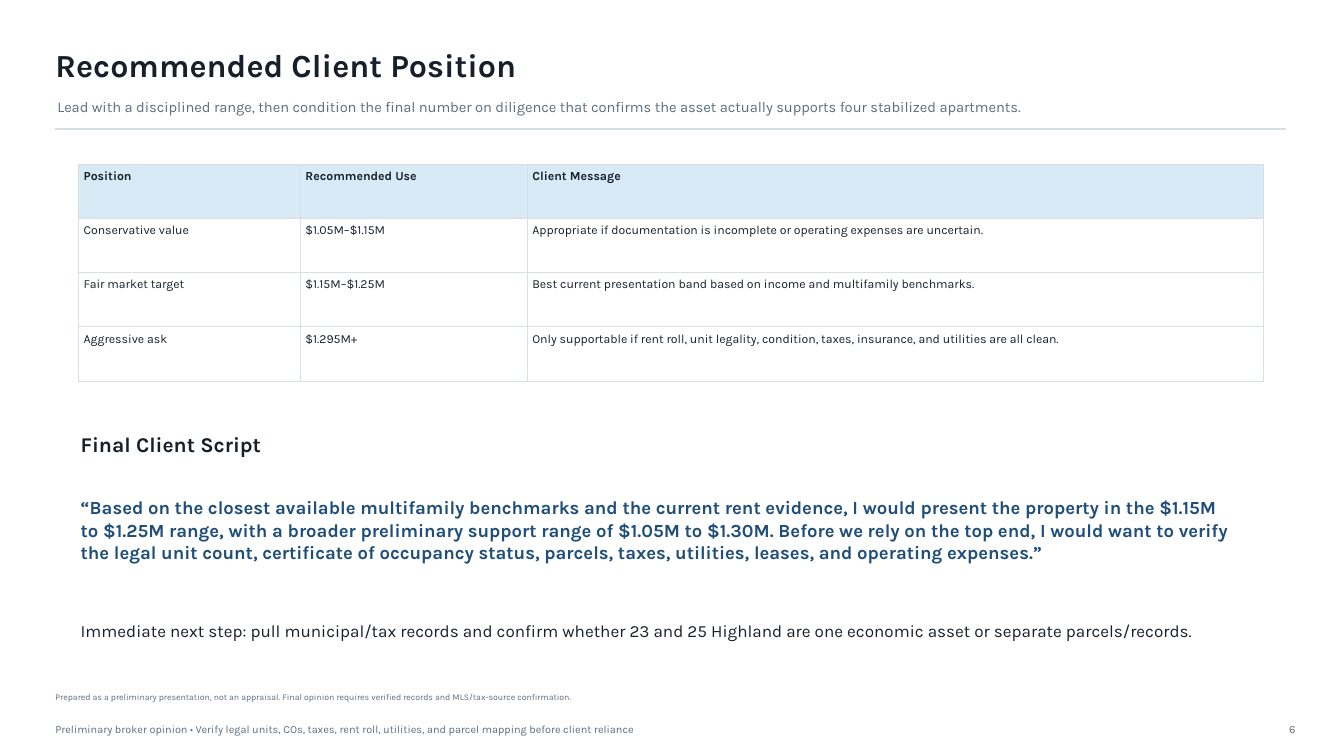
import pptx
import pptx.util
import pptx.dml.color
import pptx.enum.shapes
import pptx.enum.text
import lxml.etree
from dataclasses import dataclass
from pptx.oxml.ns import qn


@dataclass(frozen=True)
class Theme:
    font: str = "Karla"
    ink: str = "17202A"
    muted: str = "5D6D7E"
    accent: str = "1F4E79"
    rule: str = "D8DEE6"
    header: str = "D9EAF7"
    paper: str = "FFFFFF"
    title: float = 23
    subtitle: float = 10.5
    cell: float = 8.8
    heading: float = 15
    quote: float = 13.2
    body: float = 12.2
    note: float = 6.3
    footer: float = 7.8
    page: float = 8


T = Theme()
WIDTH, HEIGHT = 13.33, 7.5
MARGIN, INDENT = 0.55, 0.8
FOOTER_TOP, FOOTER_H = 7.12, 0.22

# text, (left, top, width, height), size, colour, bold
TEXTS = [
    ("Recommended Client Position", (MARGIN, 0.42, 8.9, 0.44), T.title, T.ink, True),
    ("Lead with a disciplined range, then condition the final number on diligence "
     "that confirms the asset actually supports four stabilized apartments.",
     (0.57, 0.92, 9.7, 0.28), T.subtitle, T.muted, False),
    ("Final Client Script", (INDENT, 4.25, 2.4, 0.32), T.heading, T.ink, True),
    ("“Based on the closest available multifamily benchmarks and the current rent "
     "evidence, I would present the property in the $1.15M to $1.25M range, with a "
     "broader preliminary support range of $1.05M to $1.30M. Before we rely on the "
     "top end, I would want to verify the legal unit count, certificate of occupancy "
     "status, parcels, taxes, utilities, leases, and operating expenses.”",
     (INDENT, 4.73, 11.45, 1.05), T.quote, T.accent, True),
    ("Immediate next step: pull municipal/tax records and confirm whether 23 and 25 "
     "Highland are one economic asset or separate parcels/records.",
     (INDENT, 6.1, 11.1, 0.32), T.body, T.ink, False),
    ("Prepared as a preliminary presentation, not an appraisal. Final opinion "
     "requires verified records and MLS/tax-source confirmation.",
     (MARGIN, 6.82, 12.1, 0.18), T.note, T.muted, False),
    ("Preliminary broker opinion • Verify legal units, COs, taxes, rent roll, "
     "utilities, and parcel mapping before client reliance",
     (MARGIN, FOOTER_TOP, 10.8, FOOTER_H), T.footer, T.muted, False),
]
PAGE_NUMBER = ("6", (12.55, FOOTER_TOP, 0.3, FOOTER_H), T.page, T.muted, False)

POSITIONS = [
    ("Position", "Recommended Use", "Client Message"),
    ("Conservative value", "$1.05M–$1.15M",
     "Appropriate if documentation is incomplete or operating expenses are uncertain."),
    ("Fair market target", "$1.15M–$1.25M",
     "Best current presentation band based on income and multifamily benchmarks."),
    ("Aggressive ask", "$1.295M+",
     "Only supportable if rent roll, unit legality, condition, taxes, insurance, "
     "and utilities are all clean."),
]
TABLE_LEFT, TABLE_TOP, TABLE_HEIGHT = 0.78, 1.63, 2.15
COLUMNS = (2.2, 2.25, 7.3)
CELL_INSET, BORDER = 0.05, 0.55
RULE_TOP, RULE_RIGHT = 1.28, 12.75


def inches(*values):
    return [pptx.util.Inches(v) for v in values]


def rgb(color):
    return pptx.dml.color.RGBColor.from_string(color)


def set_font(p, size, color, bold):
    p.font.name = T.font
    p.font.size = pptx.util.Pt(size)
    p.font.bold = bold
    p.font.color.rgb = rgb(color)


def add_text(s, text, box, size, color, bold):
    tf = s.shapes.add_textbox(*inches(*box)).text_frame
    tf.word_wrap = True
    tf.vertical_anchor = pptx.enum.text.MSO_ANCHOR.MIDDLE
    tf.margin_left = tf.margin_top = tf.margin_right = tf.margin_bottom = 0
    p = tf.paragraphs[0]
    p.text = text
    set_font(p, size, color, bold)
    return p


def add_borders(cell):
    """Put a thin rule on all four sides; borders must precede the cell fill."""
    props = cell._tc.get_or_add_tcPr()
    for i, side in enumerate(("a:lnL", "a:lnR", "a:lnT", "a:lnB")):
        ln = lxml.etree.Element(qn(side), w=str(pptx.util.Pt(BORDER)))
        fill = lxml.etree.SubElement(ln, qn("a:solidFill"))
        lxml.etree.SubElement(fill, qn("a:srgbClr"), val=T.rule)
        props.insert(i, ln)


def add_positions(s):
    frame = s.shapes.add_table(
        len(POSITIONS), len(COLUMNS),
        *inches(TABLE_LEFT, TABLE_TOP, sum(COLUMNS), TABLE_HEIGHT))
    table = frame.table
    for column, width in zip(table.columns, COLUMNS):
        column.width = pptx.util.Inches(width)
    for i, row in enumerate(POSITIONS):
        for j, text in enumerate(row):
            cell = table.cell(i, j)
            cell.margin_left = cell.margin_right = pptx.util.Inches(CELL_INSET)
            cell.margin_top = cell.margin_bottom = pptx.util.Inches(CELL_INSET)
            cell.fill.solid()
            cell.fill.fore_color.rgb = rgb(T.header if i == 0 else T.paper)
            add_borders(cell)
            p = cell.text_frame.paragraphs[0]
            p.text = text
            set_font(p, T.cell, T.ink, i == 0)


def add_rule(s):
    line = s.shapes.add_connector(
        pptx.enum.shapes.MSO_CONNECTOR.STRAIGHT,
        *inches(MARGIN, RULE_TOP, RULE_RIGHT, RULE_TOP))
    line.line.color.rgb = rgb(T.rule)
    line.line.width = pptx.util.Pt(1)
    lxml.etree.SubElement(line._element.spPr, qn("a:effectLst"))


def main():
    prs = pptx.Presentation()
    prs.slide_width, prs.slide_height = inches(WIDTH, HEIGHT)
    s = prs.slides.add_slide(prs.slide_layouts[6])
    s.background.fill.solid()
    s.background.fill.fore_color.rgb = rgb(T.paper)
    add_rule(s)
    add_positions(s)
    for item in TEXTS:
        add_text(s, *item)
    add_text(s, *PAGE_NUMBER).alignment = pptx.enum.text.PP_ALIGN.RIGHT
    prs.save("out.pptx")


if __name__ == "__main__":
    main()
